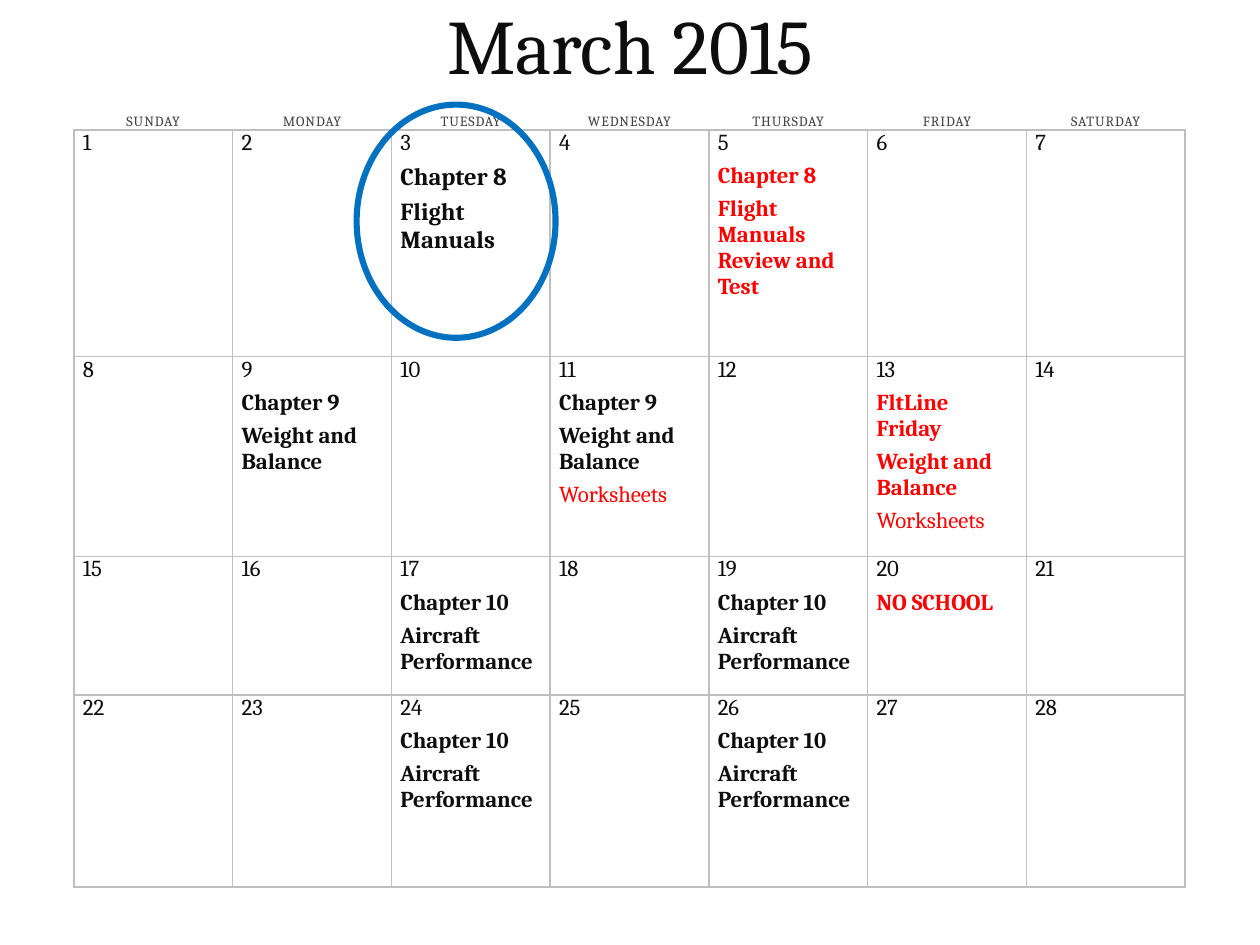
from lxml import etree
from pptx import Presentation
from pptx.dml.color import RGBColor
from pptx.enum.shapes import MSO_SHAPE
from pptx.enum.text import MSO_ANCHOR, MSO_AUTO_SIZE, PP_ALIGN
from pptx.oxml.ns import qn
from pptx.util import Cm, Pt

CENTER, LEFT = PP_ALIGN.CENTER, PP_ALIGN.LEFT
MIDDLE, BOTTOM, TOP = MSO_ANCHOR.MIDDLE, MSO_ANCHOR.BOTTOM, MSO_ANCHOR.TOP
NO_AUTOFIT = MSO_AUTO_SIZE.NONE
OVAL = MSO_SHAPE.OVAL

FONT = "Cambria"
COLORS = {
    "ink": "0D0D0D",
    "weekday": "404040",
    "alert": "FF0000",
    "grid": "BFBFBF",
    "highlight": "0070C0",
}

WEEKDAYS = ["SUNDAY", "MONDAY", "TUESDAY", "WEDNESDAY",
            "THURSDAY", "FRIDAY", "SATURDAY"]
COLUMN_WIDTH = 3.2
HEADER_HEIGHT = 0.66
# Height of the date row and of the thin row under it, for each week
WEEK_HEIGHTS = [(4.27, 0.3), (3.73, 0.3), (2.49, 0.3), (3.18, 0.69)]

# Each entry: text, colour, bold, size
AIRCRAFT = [("Chapter 10", "ink", True, 13),
            ("Aircraft Performance", "ink", True, 13)]
WEIGHT = [("Chapter 9", "ink", True, 13),
          ("Weight and Balance", "ink", True, 13)]
WORKSHEETS = ("Worksheets", "alert", False, 13)
EVENTS = {
    3: [("Chapter 8", "ink", True, 14), ("Flight Manuals", "ink", True, 14)],
    5: [("Chapter 8", "alert", True, 13),
        ("Flight Manuals Review and Test", "alert", True, 13)],
    9: WEIGHT,
    11: WEIGHT + [WORKSHEETS],
    13: [("FltLine Friday", "alert", True, 13),
         ("Weight and Balance", "alert", True, 13), WORKSHEETS],
    17: AIRCRAFT,
    19: AIRCRAFT,
    20: [("NO SCHOOL", "alert", True, 13)],
    24: AIRCRAFT,
    26: AIRCRAFT,
}


def color(name):
    return RGBColor.from_string(COLORS[name])


def add_run(paragraph, text, size, color_name, bold=False):
    run = paragraph.add_run()
    run.text = text
    run.font.name = FONT
    run.font.size = Pt(size)
    run.font.bold = bold
    run.font.color.rgb = color(color_name)
    return run


def format_cell(cell, sides, anchor=TOP):
    """Clear the fill and draw grid lines only on the named sides (L, R, T, B)."""
    properties = cell._tc.get_or_add_tcPr()
    for side in "LRTB":
        line = etree.SubElement(properties, qn(f"a:ln{side}"), w=str(Pt(1)))
        if side in sides:
            fill = etree.SubElement(line, qn("a:solidFill"))
            etree.SubElement(fill, qn("a:srgbClr"), val=COLORS["grid"])
        else:
            etree.SubElement(line, qn("a:noFill"))
    cell.fill.background()
    cell.vertical_anchor = anchor
    cell.margin_left = cell.margin_right = Cm(0.18)
    cell.margin_top = cell.margin_bottom = 0


def write_entries(cell, entries, align=LEFT):
    """Write one paragraph per entry and return the runs."""
    frame = cell.text_frame
    runs = []
    for index, (text, color_name, bold, size) in enumerate(entries):
        paragraph = frame.add_paragraph() if index else frame.paragraphs[0]
        paragraph.alignment = align
        paragraph.space_before = paragraph.space_after = Pt(2)
        runs.append(add_run(paragraph, text, size, color_name, bold))
    return runs


def fill_weekday(cell, weekday):
    format_cell(cell, "B", BOTTOM)
    for run in write_entries(cell, [(weekday, "weekday", False, 8)], CENTER):
        run._r.get_or_add_rPr().set("spc", "50")


def fill_date(cell, day):
    format_cell(cell, "LRT")
    write_entries(cell, [(str(day), "ink", False, 13)] + EVENTS.get(day, []))


def fill_spacer(cell):
    """Keep an empty cell low by giving its paragraph a small text size."""
    format_cell(cell, "LRB")
    paragraph = cell.text_frame.paragraphs[0]
    etree.SubElement(paragraph._p, qn("a:endParaRPr"), sz="400")


def add_calendar(slide):
    heights = [HEADER_HEIGHT] + [h for week in WEEK_HEIGHTS for h in week]
    days_per_week = len(WEEKDAYS)
    table = slide.shapes.add_table(
        len(heights), days_per_week, Cm(1.49), Cm(1.96),
        Cm(COLUMN_WIDTH * days_per_week), Cm(sum(heights))).table
    table.first_row = table.horz_banding = False
    for row, height in zip(table.rows, heights):
        row.height = Cm(height)
    for column, weekday in enumerate(WEEKDAYS):
        table.columns[column].width = Cm(COLUMN_WIDTH)
        fill_weekday(table.cell(0, column), weekday)
        for week in range(len(WEEK_HEIGHTS)):
            date_row = 1 + 2 * week
            fill_date(table.cell(date_row, column),
                      week * days_per_week + column + 1)
            fill_spacer(table.cell(date_row + 1, column))


def set_title(slide, text):
    title = slide.shapes.title
    title.left, title.top = Cm(8.43), Cm(-0.15)
    title.width, title.height = Cm(8.56), Cm(2.08)
    frame = title.text_frame
    frame.auto_size = NO_AUTOFIT
    frame.word_wrap = False
    frame.vertical_anchor = MIDDLE
    paragraph = frame.paragraphs[0]
    paragraph.alignment = CENTER
    add_run(paragraph, text, 44, "ink")


def add_highlight_ring(slide):
    ring = slide.shapes.add_shape(OVAL, Cm(7.19), Cm(2.11), Cm(4.01), Cm(4.7))
    ring.shadow.inherit = False
    ring.fill.background()
    ring.line.color.rgb = color("highlight")
    ring.line.width = Pt(3.5)


def main():
    presentation = Presentation()
    presentation.slide_width, presentation.slide_height = Cm(25.4), Cm(19.05)
    title_only = presentation.slide_layouts[5]
    slide = presentation.slides.add_slide(title_only)
    add_calendar(slide)
    set_title(slide, "March 2015")
    add_highlight_ring(slide)
    presentation.save("out.pptx")


if __name__ == "__main__":
    main()
